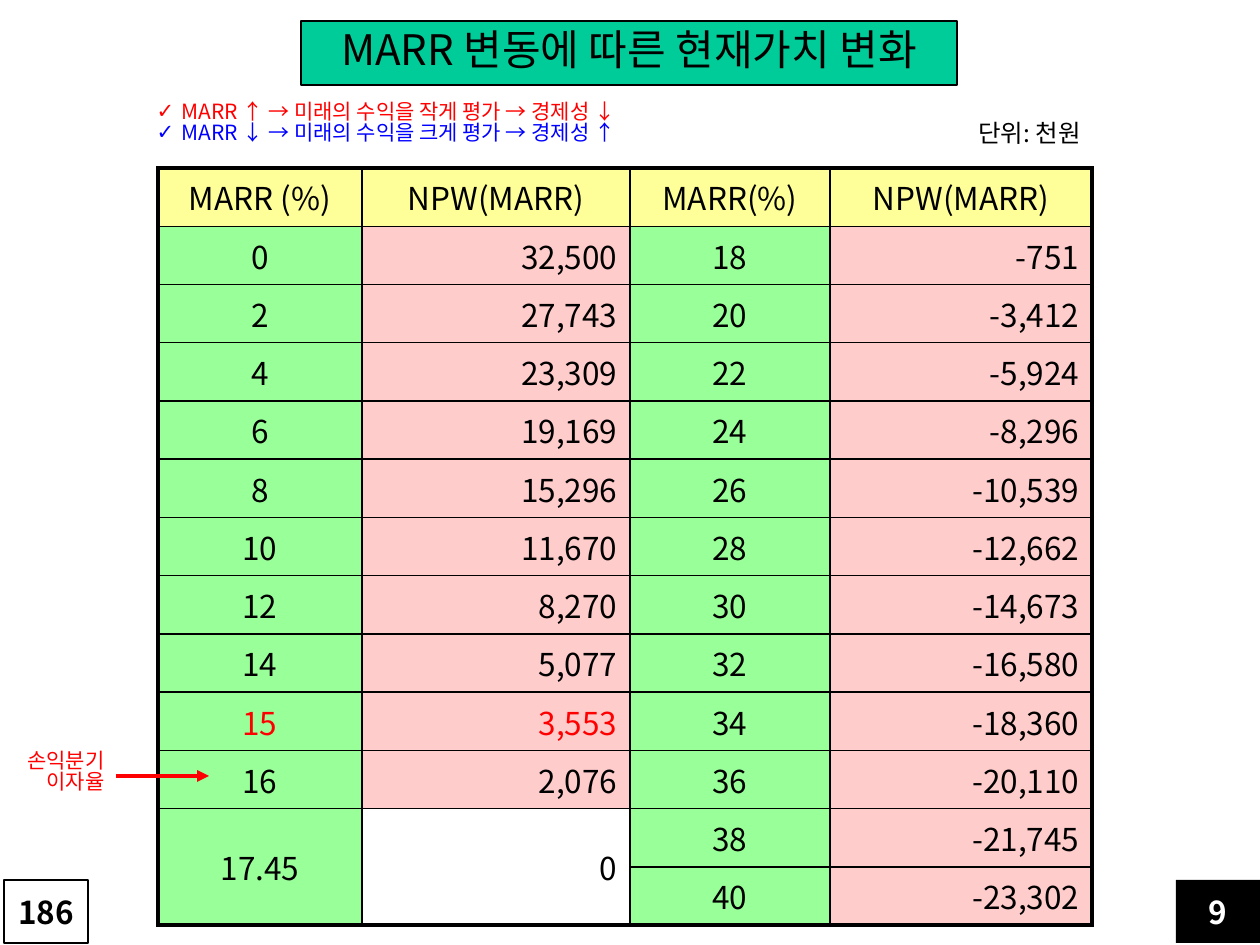
from lxml import etree
from pptx import Presentation
from pptx.dml.color import RGBColor
from pptx.enum.shapes import MSO_CONNECTOR, MSO_SHAPE
from pptx.enum.text import MSO_ANCHOR, MSO_AUTO_SIZE, PP_ALIGN
from pptx.oxml.ns import qn
from pptx.util import Pt

LEFT, CENTER, RIGHT = PP_ALIGN.LEFT, PP_ALIGN.CENTER, PP_ALIGN.RIGHT
TOP, MIDDLE = MSO_ANCHOR.TOP, MSO_ANCHOR.MIDDLE
RECTANGLE, STRAIGHT = MSO_SHAPE.RECTANGLE, MSO_CONNECTOR.STRAIGHT
NO_AUTOFIT = MSO_AUTO_SIZE.NONE

# Content
FONT = "Noto Sans CJK KR"
BLACK, WHITE, RED, BLUE = "000000", "FFFFFF", "FF0000", "0000FF"
TEAL, YELLOW, GREEN, PINK = "00CC99", "FFFF99", "99FF99", "FFCCCC"
TITLE = "MARR 변동에 따른 현재가치 변화"
RULES = [
    ("MARR ↑ → 미래의 수익을 작게 평가 → 경제성 ↓", RED),
    ("MARR ↓ → 미래의 수익을 크게 평가 → 경제성 ↑", BLUE),
]
UNIT = "단위: 천원"
BREAK_EVEN = ["손익분기", "이자율"]
HEADERS = ["MARR (%)", "NPW(MARR)", "MARR(%)", "NPW(MARR)"]
ROWS = [
    ("0", "32,500", "18", "-751"),
    ("2", "27,743", "20", "-3,412"),
    ("4", "23,309", "22", "-5,924"),
    ("6", "19,169", "24", "-8,296"),
    ("8", "15,296", "26", "-10,539"),
    ("10", "11,670", "28", "-12,662"),
    ("12", "8,270", "30", "-14,673"),
    ("14", "5,077", "32", "-16,580"),
    ("15", "3,553", "34", "-18,360"),
    ("16", "2,076", "36", "-20,110"),
    ("17.45", "0", "38", "-21,745"),
    ("", "", "40", "-23,302"),
]
RED_CELLS = {"15", "3,553"}
PAGE_BOXES = [(1176, "9", BLACK, WHITE, None), (4, "186", WHITE, BLACK, BLACK)]

# Layout in px, 126 to the inch
SCALE = 914400 // 126
COLUMN_WIDTHS = [204, 268, 200, 262]
ROW_HEIGHT = 50


def px(*lengths):
    return [length * SCALE for length in lengths]


def color(value):
    return RGBColor.from_string(value)


def format_paragraph(paragraph, text, size, text_color, align=LEFT, bold=False):
    paragraph.text = text
    paragraph.alignment = align
    paragraph.space_before = Pt(0)
    font = paragraph.font
    font.name, font.size, font.bold = FONT, Pt(size), bold
    font.color.rgb = color(text_color)
    defaults = paragraph._p.pPr.find(qn("a:defRPr"))
    etree.SubElement(defaults, qn("a:ea")).set("typeface", FONT)


def fill_frame(shape, lines, size, align=LEFT, anchor=TOP, wrap=True,
               bold=False, spacing=0.85):
    frame = shape.text_frame
    frame.auto_size, frame.word_wrap = NO_AUTOFIT, wrap
    frame.vertical_anchor = anchor
    for index, (text, text_color) in enumerate(lines):
        paragraph = frame.add_paragraph() if index else frame.paragraphs[0]
        format_paragraph(paragraph, text, size, text_color, align, bold)
        paragraph.line_spacing = spacing


def place(shape, *box):
    shape.left, shape.top, shape.width, shape.height = px(*box)


def style_box(shape, fill_color, line_color):
    shape.fill.solid()
    shape.fill.fore_color.rgb = color(fill_color)
    if line_color:
        shape.line.color.rgb = color(line_color)
        shape.line.width = Pt(0.75)
    else:
        shape.line.fill.background()


def add_border(cell, side, width):
    line = etree.SubElement(cell._tc.get_or_add_tcPr(), qn(f"a:ln{side}"))
    line.set("w", str(Pt(width)))
    fill = etree.SubElement(line, qn("a:solidFill"))
    etree.SubElement(fill, qn("a:srgbClr")).set("val", BLACK)


presentation = Presentation()
presentation.slide_width, presentation.slide_height = px(1260, 945)
slide = presentation.slides.add_slide(presentation.slide_layouts[1])
shapes = slide.shapes

# Title
title = shapes.title
place(title, 301, 21, 656, 64)
style_box(title, TEAL, BLACK)
fill_frame(title, [(TITLE, BLACK)], 24, CENTER, MIDDLE, wrap=False)

# Check list
rules = slide.placeholders[1]
place(rules, 144, 96, 562, 63)
fill_frame(rules, RULES, 12)
for paragraph in rules.text_frame.paragraphs:
    properties = paragraph._p.pPr
    properties.set("marL", str(25 * SCALE))
    properties.set("indent", str(-25 * SCALE))
    bullet = etree.Element(qn("a:buChar"), char="✓")
    properties.find(qn("a:defRPr")).addprevious(bullet)

# Table with thick outer borders
last_row, last_column = len(ROWS), len(HEADERS) - 1
table = shapes.add_table(
    last_row + 1, last_column + 1,
    *px(158, 168, sum(COLUMN_WIDTHS), ROW_HEIGHT * (last_row + 1))).table
table.first_row = table.horz_banding = False
for column, width in zip(table.columns, px(*COLUMN_WIDTHS)):
    column.width = width
for row in table.rows:
    row.height = ROW_HEIGHT * SCALE
for column_index in (0, 1):
    table.cell(last_row - 1, column_index).merge(table.cell(last_row, column_index))

for row_index, values in enumerate([HEADERS] + ROWS):
    for column_index, text in enumerate(values):
        cell = table.cell(row_index, column_index)
        bottom_row = row_index + (cell.span_height if cell.is_merge_origin else 1) - 1
        outer_sides = {
            "L": column_index == 0,
            "R": column_index == last_column,
            "T": row_index == 0,
            "B": bottom_row == last_row,
        }
        for side, is_outer in outer_sides.items():
            add_border(cell, side, 2.25 if is_outer else 1)
        is_value = column_index % 2 == 1 and row_index > 0
        if is_value and column_index == 1 and row_index >= last_row - 1:
            cell.fill.background()
        else:
            cell.fill.solid()
            cell.fill.fore_color.rgb = color(
                YELLOW if row_index == 0 else PINK if is_value else GREEN)
        if cell.is_merge_origin:
            cell.vertical_anchor = MIDDLE
        if text:
            format_paragraph(cell.text_frame.paragraphs[0], text, 18,
                             RED if text in RED_CELLS else BLACK,
                             RIGHT if is_value else CENTER)

# Unit and break-even labels
unit = shapes.add_textbox(*px(966, 116, 189, 42))
fill_frame(unit, [(UNIT, BLACK)], 14)
break_even = shapes.add_textbox(*px(6, 745, 111, 64))
fill_frame(break_even, [(text, RED) for text in BREAK_EVEN], 12, RIGHT, wrap=False)

# Break-even arrow
arrow = shapes.add_connector(STRAIGHT, *px(116, 776, 209, 776))
arrow.line.color.rgb = color(RED)
arrow.line.width = Pt(2.25)
etree.SubElement(arrow.line._get_or_add_ln(), qn("a:tailEnd")).set("type", "triangle")
etree.SubElement(arrow._element.spPr, qn("a:effectLst"))

# Page numbers
for left, number, fill_color, text_color, line_color in PAGE_BOXES:
    page_box = shapes.add_shape(RECTANGLE, *px(left, 880, 84, 63))
    page_box.shadow.inherit = False
    style_box(page_box, fill_color, line_color)
    fill_frame(page_box, [(number, text_color)], 18, CENTER, MIDDLE,
               bold=True, spacing=1.0)

presentation.save("out.pptx")
